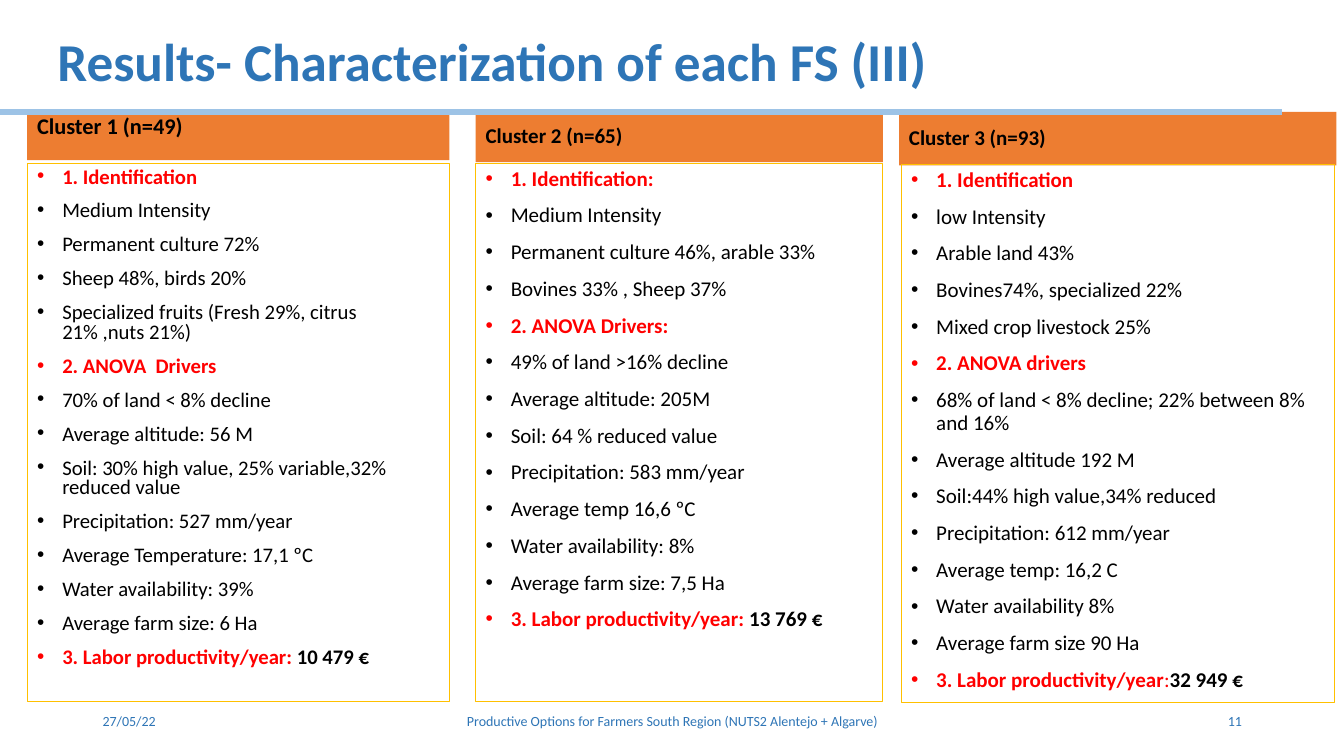
from lxml import etree
from pptx import Presentation
from pptx.dml.color import RGBColor
from pptx.enum import shapes, text
from pptx.oxml.ns import qn
from pptx.util import Pt

BLUE, RED, BLACK = "2E75B6", "FF0000", "000000"
ORANGE, GOLD, PALE_BLUE = "ED7D31", "FFC000", "9DC3E6"
LEFT, CENTER, RIGHT = (text.PP_ALIGN.LEFT, text.PP_ALIGN.CENTER,
                       text.PP_ALIGN.RIGHT)
TOP, MIDDLE = text.MSO_ANCHOR.TOP, text.MSO_ANCHOR.MIDDLE
INDENT = 18

# Each cluster: header and body frames, text settings, and the body's items.
# Items starting with a number are headings; "|" splits off the black value.
CLUSTERS = [
    dict(name="Cluster 1 (n=49)", header=(19.4, 78.5, 301.7, 36),
         body=(19.4, 116.6, 301.7, 384.5), header_size=16, anchor=TOP,
         size=14.8, spacing=0.8, items=[
             "1. Identification", "Medium Intensity", "Permanent culture 72%",
             "Sheep 48%, birds 20%",
             "Specialized fruits (Fresh 29%, citrus 21% ,nuts 21%)",
             "2. ANOVA  Drivers", "70% of land < 8% decline",
             "Average altitude: 56 M",
             "Soil: 30% high value, 25% variable,32% reduced value",
             "Precipitation: 527 mm/year", "Average Temperature: 17,1 ºC",
             "Water availability: 39%", "Average farm size: 6 Ha",
             "3. Labor productivity/year: |10 479 €"]),
    dict(name="Cluster 2 (n=65)", header=(339.8, 79.9, 290.9, 36),
         body=(339.8, 116.6, 290.9, 384.5), header_size=15, anchor=MIDDLE,
         size=15, spacing=0.9, items=[
             "1. Identification:", "Medium Intensity",
             "Permanent culture 46%, arable 33%", "Bovines 33% , Sheep 37%",
             "2. ANOVA Drivers:", "49% of land >16% decline",
             "Average altitude: 205M", "Soil: 64 % reduced value",
             "Precipitation: 583 mm/year", "Average temp 16,6 ºC",
             "Water availability: 8%", "Average farm size: 7,5 Ha",
             "3. Labor productivity/year: |13 769 €"]),
    dict(name="Cluster 3 (n=93)", header=(642.2, 79.9, 312.5, 38.2),
         body=(643.7, 117.4, 309.6, 384.5), header_size=15, anchor=MIDDLE,
         size=15, spacing=0.9, items=[
             "1. Identification", "low Intensity", "Arable land 43%",
             "Bovines74%, specialized 22%", "Mixed crop livestock 25%",
             "2. ANOVA drivers",
             "68% of land < 8% decline; 22% between 8% and 16%",
             "Average altitude 192 M", "Soil:44% high value,34% reduced",
             "Precipitation: 612 mm/year", "Average temp: 16,2 C",
             "Water availability 8%", "Average farm size 90 Ha",
             "3. Labor productivity/year|:|32 949 €"]),
]
FOOTERS = [
    ("27/05/22", 66.2, 216, LEFT),
    ("Productive Options for Farmers South Region (NUTS2 Alentejo + Algarve)",
     318.2, 324, CENTER),
    ("11", 678.2, 216, RIGHT),
]


def color(code):
    return RGBColor.from_string(code)


def add_span(para, words, size, ink=BLACK, bold=False):
    span = para.add_run()
    span.text = words
    font = span.font
    font.name, font.size, font.bold = "Calibri", Pt(size), bold
    font.color.rgb = color(ink)


def format_para(para, align=LEFT, spacing=1.0, before=0, after=0):
    para.alignment, para.line_spacing = align, spacing
    para.space_before, para.space_after = Pt(before), Pt(after)


def add_bullet(para):
    """Give the paragraph a round bullet and a hanging indent."""
    props = para._p.get_or_add_pPr()
    props.set("marL", str(Pt(INDENT)))
    props.set("indent", str(-Pt(INDENT)))
    etree.SubElement(props, qn("a:buFont"), typeface="Arial")
    etree.SubElement(props, qn("a:buChar"), char="•")


def add_panel(page, frame, fill=None, line=None, anchor=TOP):
    """Add a rectangle and return its text frame."""
    panel = page.shapes.add_shape(shapes.MSO_SHAPE.RECTANGLE, *map(Pt, frame))
    panel.shadow.inherit = False
    if fill:
        panel.fill.solid()
        panel.fill.fore_color.rgb = color(fill)
    else:
        panel.fill.background()
    if line:
        panel.line.color.rgb = color(line)
        panel.line.width = Pt(0.75)
    else:
        panel.line.fill.background()
    panel.text_frame.word_wrap = True
    panel.text_frame.vertical_anchor = anchor
    return panel.text_frame


def add_item(para, item, size, spacing):
    format_para(para, spacing=spacing, before=10)
    add_bullet(para)
    if not item.startswith(("1. ", "2. ", "3. ")):
        add_span(para, item, size)
        return
    label, *rest = item.split("|")
    add_span(para, label, size, RED, bold=True)
    for part in rest:
        if part == ":":
            add_span(para, part, size, RED)
        else:
            add_span(para, part, size, bold=True)


def add_cluster(page, cluster):
    header = add_panel(page, cluster["header"], fill=ORANGE,
                       anchor=cluster["anchor"])
    format_para(header.paragraphs[0], spacing=0.9)
    add_span(header.paragraphs[0], cluster["name"], cluster["header_size"],
             bold=True)

    body = add_panel(page, cluster["body"], line=GOLD)
    for index, item in enumerate(cluster["items"]):
        para = body.add_paragraph() if index else body.paragraphs[0]
        add_item(para, item, cluster["size"], cluster["spacing"])


def add_footer(page, words, left, width, align):
    box = page.shapes.add_textbox(Pt(left), Pt(500.4), Pt(width), Pt(28.8))
    box.text_frame.word_wrap = True
    box.text_frame.vertical_anchor = MIDDLE
    para = box.text_frame.paragraphs[0]
    format_para(para, align)
    add_span(para, words, 10, BLUE)


def add_rule(page):
    rule = page.shapes.add_connector(shapes.MSO_CONNECTOR.STRAIGHT,
                                     Pt(0), Pt(79.9), Pt(915.8), Pt(79.9))
    rule.line.color.rgb = color(PALE_BLUE)
    rule.line.width = Pt(4)
    etree.SubElement(rule._element.spPr, qn("a:effectLst"))


def set_title(page, words):
    title = page.shapes.title
    title.left, title.top = Pt(33.8), Pt(12.2)
    title.width, title.height = Pt(946.8), Pt(55.4)
    frame = title.text_frame
    frame.word_wrap, frame.vertical_anchor = True, TOP
    frame.auto_size = text.MSO_AUTO_SIZE.NONE
    format_para(frame.paragraphs[0], spacing=1.1, after=8)
    add_span(frame.paragraphs[0], words, 38, BLUE, bold=True)


def main():
    deck = Presentation()
    deck.slide_width, deck.slide_height = Pt(960), Pt(540)
    page = deck.slides.add_slide(deck.slide_layouts[5])
    set_title(page, "Results- Characterization of each FS (III)")
    for footer in FOOTERS:
        add_footer(page, *footer)
    for cluster in CLUSTERS:
        add_cluster(page, cluster)
    add_rule(page)
    deck.save("out.pptx")


if __name__ == "__main__":
    main()
